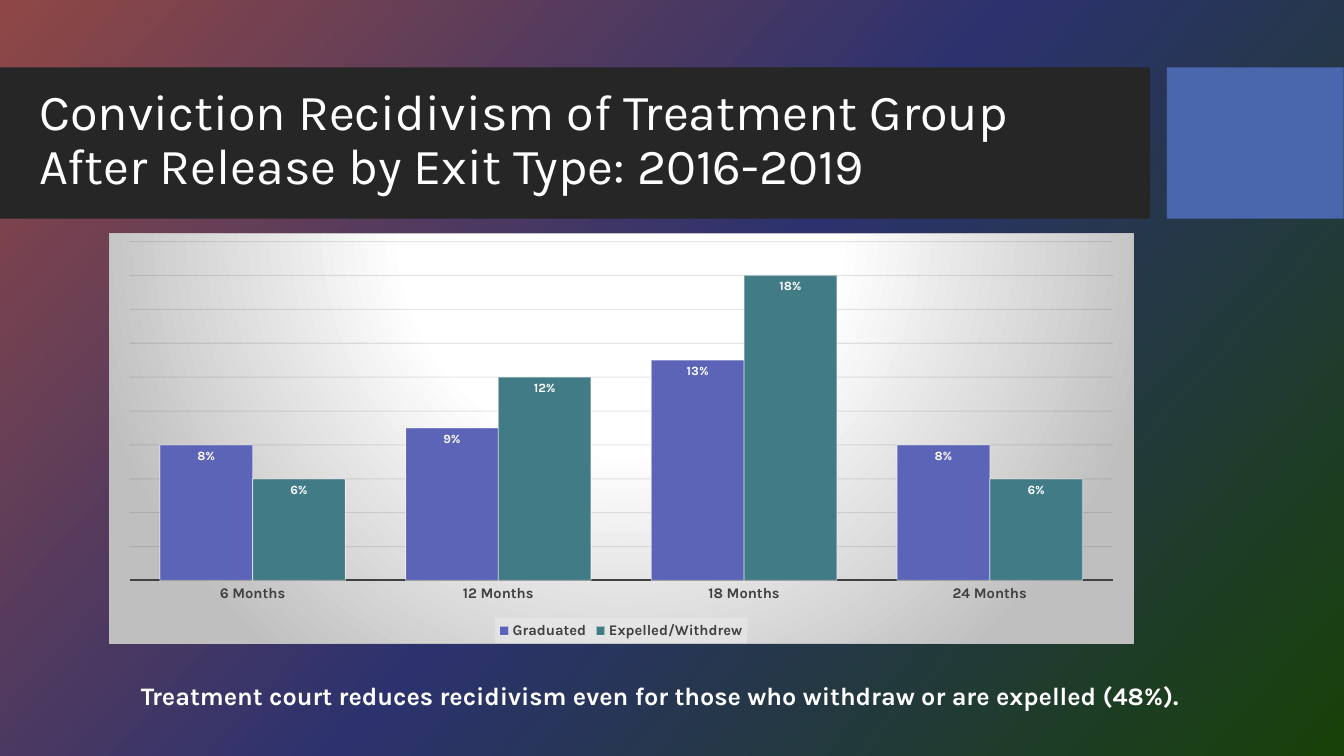
from lxml.etree import SubElement
from pptx import Presentation
from pptx.chart.data import CategoryChartData
from pptx.dml.color import RGBColor
from pptx.enum.chart import XL_CHART_TYPE, XL_LABEL_POSITION, XL_LEGEND_POSITION, XL_TICK_MARK
from pptx.enum.shapes import MSO_SHAPE
from pptx.enum.text import MSO_ANCHOR
from pptx.oxml import parse_xml
from pptx.oxml.ns import nsdecls, qn
from pptx.util import Cm, Pt

FONT = "Karla"
WHITE = RGBColor(0xFF, 0xFF, 0xFF)
BLACK = RGBColor(0x0D, 0x0D, 0x0D)
CHARCOAL = RGBColor(0x26, 0x26, 0x26)
DARK_GRAY = RGBColor(0x40, 0x40, 0x40)
GRAY = RGBColor(0xBF, 0xBF, 0xBF)
PALE_GRAY = RGBColor(0xF2, 0xF2, 0xF2)
BLUE = RGBColor(0x4A, 0x66, 0xAC)
INDIGO = RGBColor(0x5C, 0x64, 0xB7)
TEAL = RGBColor(0x41, 0x7B, 0x85)
RUST = RGBColor(0x8F, 0x47, 0x45)
NAVY = RGBColor(0x2C, 0x32, 0x6E)
GREEN = RGBColor(0x18, 0x41, 0x08)

LINEAR = '<a:lin ang="2520000" scaled="0"/>'
RADIAL = ('<a:path path="circle"><a:fillToRect l="50000" t="-80000" '
          'r="50000" b="180000"/></a:path>')


def gradient(stops, direction):
    gs = "".join(f'<a:gs pos="{pos * 1000}"><a:srgbClr val="{color}"/></a:gs>'
                 for pos, color in stops)
    return (f'<a:gradFill {nsdecls("a")} rotWithShape="1"><a:gsLst>{gs}</a:gsLst>'
            f'{direction}</a:gradFill>')


def set_alpha(element, percent):
    for clr in element.iter(qn("a:srgbClr")):
        SubElement(clr, qn("a:alpha"), val=str(percent * 1000))


def set_font(font, size, color, bold=False):
    font.name = FONT
    font.size = Pt(size)
    font.bold = bold
    font.color.rgb = color


def set_background(s):
    s.background.fill.solid()
    bg = s.element.find(".//" + qn("p:bgPr"))
    stops = [(0, RUST), (50, NAVY), (100, GREEN)]
    bg.replace(bg[0], parse_xml(gradient(stops, LINEAR)))


def add_block(s, left, width, color):
    sp = s.shapes.add_shape(MSO_SHAPE.RECTANGLE, Cm(left), Cm(1.7), Cm(width), Cm(3.81))
    sp.shadow.inherit = False
    sp.fill.solid()
    sp.fill.fore_color.rgb = color
    sp.line.fill.background()


def add_text(s, left, top, width, height, text, size, bold=False,
             anchor=MSO_ANCHOR.TOP, spacing=1.0):
    tf = s.shapes.add_textbox(Cm(left), Cm(top), Cm(width), Cm(height)).text_frame
    tf.word_wrap = True
    tf.vertical_anchor = anchor
    p = tf.paragraphs[0]
    p.text = text
    p.line_spacing = spacing
    for r in p.runs:
        set_font(r.font, size, WHITE, bold)


def style_axes(chart):
    cat = chart.category_axis
    cat.major_tick_mark = cat.minor_tick_mark = XL_TICK_MARK.NONE
    cat.format.line.color.rgb = DARK_GRAY
    cat.format.line.width = Pt(1.5)
    set_font(cat.tick_labels.font, 10.5, DARK_GRAY, True)
    val = chart.value_axis
    val.visible = False
    val.minimum_scale, val.maximum_scale, val.major_unit = 0, 0.2, 0.02
    val.tick_labels.number_format = "0%"
    val.tick_labels.number_format_is_linked = False
    grid = val.major_gridlines
    grid.format.line.color.rgb = BLACK
    grid.format.line.width = Pt(0.75)
    set_alpha(val._element.find(qn("c:majorGridlines")), 10)


def style_series(series, color):
    series.format.fill.solid()
    series.format.fill.fore_color.rgb = color
    line = series.format.line
    line.color.rgb = WHITE
    line.width = Pt(0.75)
    set_alpha(series._element.find(qn("c:spPr")).find(qn("a:ln")), 50)
    labels = series.data_labels
    labels.show_value = True
    labels.position = XL_LABEL_POSITION.INSIDE_END
    labels.number_format = "0%"
    labels.number_format_is_linked = False
    set_font(labels.font, 9, WHITE, True)


def style_legend(chart):
    chart.has_legend = True
    legend = chart.legend
    legend.position = XL_LEGEND_POSITION.BOTTOM
    legend.include_in_layout = False
    set_font(legend.font, 10.5, DARK_GRAY, True)
    box = parse_xml(f'<c:spPr {nsdecls("c", "a")}><a:solidFill>'
                    f'<a:srgbClr val="{PALE_GRAY}"/></a:solidFill></c:spPr>')
    set_alpha(box, 39)
    legend._element.find(qn("c:txPr")).addprevious(box)


def style_chart_area(chart):
    stops = [(0, WHITE), (39, WHITE), (100, GRAY)]
    area = parse_xml(f'<c:spPr {nsdecls("c", "a")}>{gradient(stops, RADIAL)}'
                     f'<a:ln w="9525"><a:solidFill><a:srgbClr val="{GRAY}"/>'
                     '</a:solidFill></a:ln></c:spPr>')
    chart._chartSpace.find(qn("c:txPr")).addprevious(area)


def add_recidivism_chart(s):
    data = CategoryChartData(number_format="0%")
    data.categories = [f"{months} Months" for months in (6, 12, 18, 24)]
    data.add_series("Graduated", (0.08, 0.09, 0.13, 0.08))
    data.add_series("Expelled/Withdrew", (0.06, 0.12, 0.18, 0.06))
    chart = s.shapes.add_chart(XL_CHART_TYPE.COLUMN_CLUSTERED, Cm(2.74), Cm(5.87),
                               Cm(25.83), Cm(10.36), data).chart
    chart.has_title = False
    set_font(chart.font, 10, WHITE)
    plot = chart.plots[0]
    plot.gap_width = 65
    plot.overlap = 0
    plot.vary_by_categories = False
    for series, color in zip(plot.series, (INDIGO, TEAL)):
        style_series(series, color)
    style_axes(chart)
    style_legend(chart)
    style_chart_area(chart)


def main():
    prs = Presentation()
    prs.slide_width, prs.slide_height = Cm(33.87), Cm(19.05)
    s = prs.slides.add_slide(prs.slide_layouts[6])
    set_background(s)
    add_block(s, 0, 28.98, CHARCOAL)
    add_block(s, 29.41, 4.45, BLUE)
    add_text(s, 0.74, 2.06, 31.29, 3,
             "Conviction Recidivism of Treatment Group \vAfter Release by Exit Type: 2016-2019",
             36, anchor=MSO_ANCHOR.MIDDLE, spacing=0.9)
    add_text(s, 3.3, 17.02, 30.5, 2,
             "Treatment court reduces recidivism even for those who withdraw "
             "or are expelled (48%).", 18, bold=True)
    add_recidivism_chart(s)
    prs.save("out.pptx")


if __name__ == "__main__":
    main()
